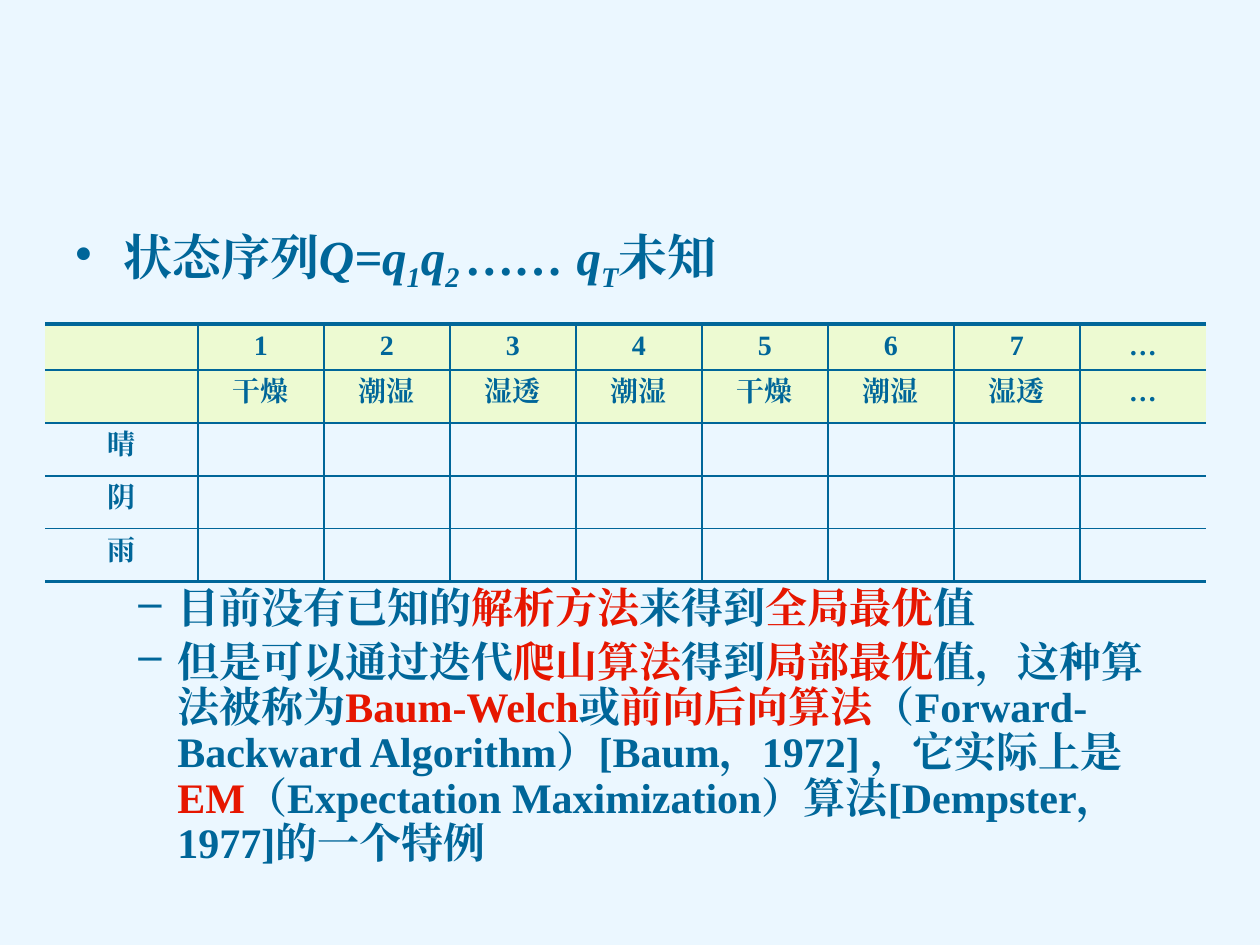
from lxml import etree
from pptx import Presentation
from pptx.dml.color import RGBColor
from pptx.enum.text import PP_ALIGN
from pptx.oxml.ns import qn
from pptx.util import Inches, Pt

CENTER = PP_ALIGN.CENTER

THEME = {
    "font": "Times New Roman",
    "background": "EBF7FF", "ink": "006699", "accent": "E61600", "header": "EDFAD2",
    "heading": 28, "body": 24, "cell": 16,
    "thin": 1, "thick": 2.25,
}

# Content: each run is (text, format)
ITALIC = {"italic": True}
SUBSCRIPT = {"italic": True, "baseline": -25000}
ACCENT = {"color": "accent"}
HEADING = [
    ("状态序列", {}), ("Q=q", ITALIC), ("1", SUBSCRIPT), ("q", ITALIC),
    ("2 ", SUBSCRIPT), ("…… q", ITALIC), ("T", SUBSCRIPT), ("未知", {}),
]
POINTS = [
    [("目前没有已知的", {}), ("解析方法", ACCENT), ("来得到", {}),
     ("全局最优", ACCENT), ("值", {})],
    [("但是可以通过迭代", {}), ("爬山算法", ACCENT), ("得到", {}),
     ("局部最优", ACCENT), ("值，这种算法被称为", {}), ("Baum-Welch", ACCENT),
     ("或", {}), ("前向后向算法", ACCENT),
     ("（Forward-Backward Algorithm）[Baum，1972] ，它实际上是", {}),
     ("EM", ACCENT),
     ("（Expectation Maximization）算法[Dempster，1977]的一个特例", {})],
]
OBSERVATIONS = ["干燥", "潮湿", "湿透", "潮湿", "干燥", "潮湿", "湿透", "…"]
STATES = ["晴", "阴", "雨"]
STEPS = ["1", "2", "3", "4", "5", "6", "7", "…"]
ROWS = [["", *STEPS], ["", *OBSERVATIONS]]
ROWS += [[state] + [""] * len(STEPS) for state in STATES]
HEADER_ROWS = 2

# Layout in inches
HEADING_BOX = (0.5, 1.75, 9, 0.7)
POINTS_BOX = (0.5, 4.61, 9, 2.4)
TABLE_LEFT, TABLE_TOP = 0.36, 2.57
COLUMN_WIDTHS = [1.21] + [1] * len(STEPS)
ROW_HEIGHTS = [0.34] + [0.42] * (len(ROWS) - 1)


def add_text(paragraph, text, size="body", color="ink", italic=False, baseline=0):
    run = paragraph.add_run()
    run.text = text
    font = run.font
    font.name = THEME["font"]
    font.size = Pt(THEME[size])
    font.bold = True
    font.italic = italic
    font.color.rgb = RGBColor.from_string(THEME[color])
    properties = font._element
    if baseline:
        properties.set("baseline", str(baseline))
    etree.SubElement(properties, qn("a:ea")).set("typeface", THEME["font"])


def add_bullets(slide, box, items, size, bullet, margin, hanging, line_spacing=1.0):
    frame = slide.shapes.add_textbox(*map(Inches, box)).text_frame
    frame.word_wrap = True
    for index, runs in enumerate(items):
        paragraph = frame.paragraphs[0] if index == 0 else frame.add_paragraph()
        paragraph.line_spacing = line_spacing
        paragraph.space_before = Pt(THEME[size] * 0.2)
        properties = paragraph._p.get_or_add_pPr()
        properties.set("marL", str(Inches(margin)))
        properties.set("indent", str(-Inches(hanging)))
        etree.SubElement(properties, qn("a:buChar")).set("char", bullet)
        for text, style in runs:
            add_text(paragraph, text, size=size, **style)


def set_border(cell, side, width):
    """Draw one cell edge; a width of None leaves it open."""
    line = etree.SubElement(cell._tc.get_or_add_tcPr(), qn(f"a:ln{side}"))
    if width is None:
        etree.SubElement(line, qn("a:noFill"))
        return
    line.set("w", str(Pt(width)))
    fill = etree.SubElement(line, qn("a:solidFill"))
    etree.SubElement(fill, qn("a:srgbClr")).set("val", THEME["ink"])


def add_state_table(slide):
    last_row, last_column = len(ROWS) - 1, len(COLUMN_WIDTHS) - 1
    table = slide.shapes.add_table(
        len(ROWS), len(COLUMN_WIDTHS), Inches(TABLE_LEFT), Inches(TABLE_TOP),
        Inches(sum(COLUMN_WIDTHS)), Inches(sum(ROW_HEIGHTS))).table
    table.first_row = table.horz_banding = False
    for column, width in zip(table.columns, COLUMN_WIDTHS):
        column.width = Inches(width)
    for row, height in zip(table.rows, ROW_HEIGHTS):
        row.height = Inches(height)

    thin, thick = THEME["thin"], THEME["thick"]
    for r, texts in enumerate(ROWS):
        for c, text in enumerate(texts):
            cell = table.cell(r, c)
            # Borders go before the fill in the cell properties
            set_border(cell, "L", thin if c else None)
            set_border(cell, "R", thin if c < last_column else None)
            set_border(cell, "T", thin if r else thick)
            set_border(cell, "B", thin if r < last_row else thick)
            if r < HEADER_ROWS:
                cell.fill.solid()
                cell.fill.fore_color.rgb = RGBColor.from_string(THEME["header"])
            else:
                cell.fill.background()
            paragraph = cell.text_frame.paragraphs[0]
            paragraph.alignment = CENTER
            paragraph.font.size = Pt(THEME["cell"])
            if text:
                add_text(paragraph, text, size="cell")


def main():
    presentation = Presentation()
    presentation.slide_width, presentation.slide_height = Inches(10), Inches(7.5)
    slide = presentation.slides.add_slide(presentation.slide_layouts[6])
    background = slide.background.fill
    background.solid()
    background.fore_color.rgb = RGBColor.from_string(THEME["background"])

    # Heading, table of states over time, and closing points
    add_bullets(slide, HEADING_BOX, [HEADING], "heading", "•", 0.38, 0.38)
    add_state_table(slide)
    add_bullets(slide, POINTS_BOX, POINTS, "body", "–", 0.81, 0.31, line_spacing=0.9)
    presentation.save("out.pptx")


if __name__ == "__main__":
    main()
